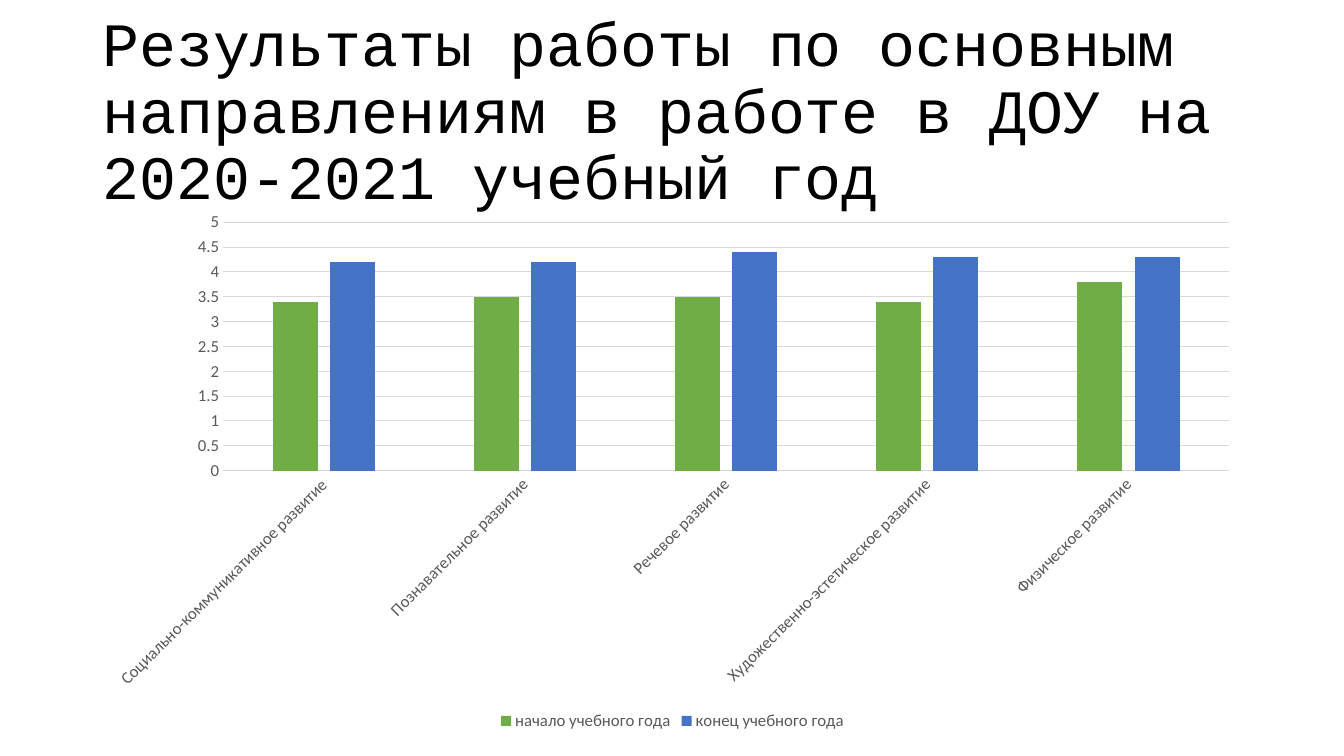
from pptx import Presentation
from pptx.chart.data import CategoryChartData
from pptx.dml.color import RGBColor
from pptx.enum.chart import XL_CHART_TYPE, XL_LEGEND_POSITION, XL_TICK_MARK
from pptx.enum.text import MSO_ANCHOR
from pptx.oxml.ns import qn
from pptx.util import Inches, Pt

COLUMNS = XL_CHART_TYPE.COLUMN_CLUSTERED
BOTTOM = XL_LEGEND_POSITION.BOTTOM
NO_TICK = XL_TICK_MARK.NONE
MIDDLE = MSO_ANCHOR.MIDDLE

COLORS = {
    "title": "000000",
    "label": "595959",
    "grid": "D9D9D9",
    "start": "70AD47",
    "end": "4472C4",
}
LEFT, WIDTH = Inches(0.92), Inches(11.5)


def set_font(font, size, name, color):
    font.size = Pt(size)
    font.name = name
    font.bold = False
    font.color.rgb = RGBColor.from_string(COLORS[color])


def add_text(slide, text, top, height, size, name, color, line_spacing):
    box = slide.shapes.add_textbox(LEFT, top, WIDTH, height)
    frame = box.text_frame
    frame.word_wrap = True
    frame.vertical_anchor = MIDDLE
    paragraph = frame.paragraphs[0]
    paragraph.line_spacing = line_spacing
    run = paragraph.add_run()
    run.text = text
    set_font(run.font, size, name, color)


prs = Presentation()
prs.slide_width, prs.slide_height = Inches(13.33), Inches(7.5)
slide = prs.slides.add_slide(prs.slide_layouts[6])

# Title
add_text(
    slide,
    "Результаты работы по основным направлениям в работе в ДОУ на 2020-2021 учебный год",
    top=Inches(0.4), height=Inches(1.45),
    size=44, name="Courier New", color="title", line_spacing=0.9,
)

# Results by area of development
results = CategoryChartData(number_format="General")
results.categories = [
    "Социально-коммуникативное развитие",
    "Познавательное развитие",
    "Речевое развитие",
    "Художественно-эстетическое развитие",
    "Физическое развитие",
]
results.add_series("начало учебного года", [3.4, 3.5, 3.5, 3.4, 3.8])
results.add_series("конец учебного года", [4.2, 4.2, 4.4, 4.3, 4.3])
chart = slide.shapes.add_chart(
    COLUMNS, LEFT, Inches(2), WIDTH, Inches(5.29), results
).chart
chart.has_title = False
set_font(chart.font, 12, "Calibri", "label")

# Columns
plot = chart.plots[0]
plot.gap_width = 219
plot.overlap = -27
plot.vary_by_categories = False
for series, period in zip(plot.series, ("start", "end")):
    series.format.fill.solid()
    series.format.fill.fore_color.rgb = RGBColor.from_string(COLORS[period])

# Axes and gridlines
areas, scores = chart.category_axis, chart.value_axis
for axis in (areas, scores):
    axis.major_tick_mark = axis.minor_tick_mark = NO_TICK
    set_font(axis.tick_labels.font, 12, "Calibri", "label")
scores.minimum_scale, scores.maximum_scale, scores.major_unit = 0, 5, 0.5
scores.format.line.fill.background()
scores.has_major_gridlines = True
for line in (areas.format.line, scores.major_gridlines.format.line):
    line.width = Pt(0.75)
    line.color.rgb = RGBColor.from_string(COLORS["grid"])

# Area names slant upwards at 45 degrees
label_body = areas._element.find(qn("c:txPr")).find(qn("a:bodyPr"))
label_body.set("rot", str(-45 * 60000))
label_body.set("vert", "horz")

# Legend
chart.has_legend = True
chart.legend.position = BOTTOM
chart.legend.include_in_layout = False
set_font(chart.legend.font, 12, "Calibri", "label")

prs.save("out.pptx")
